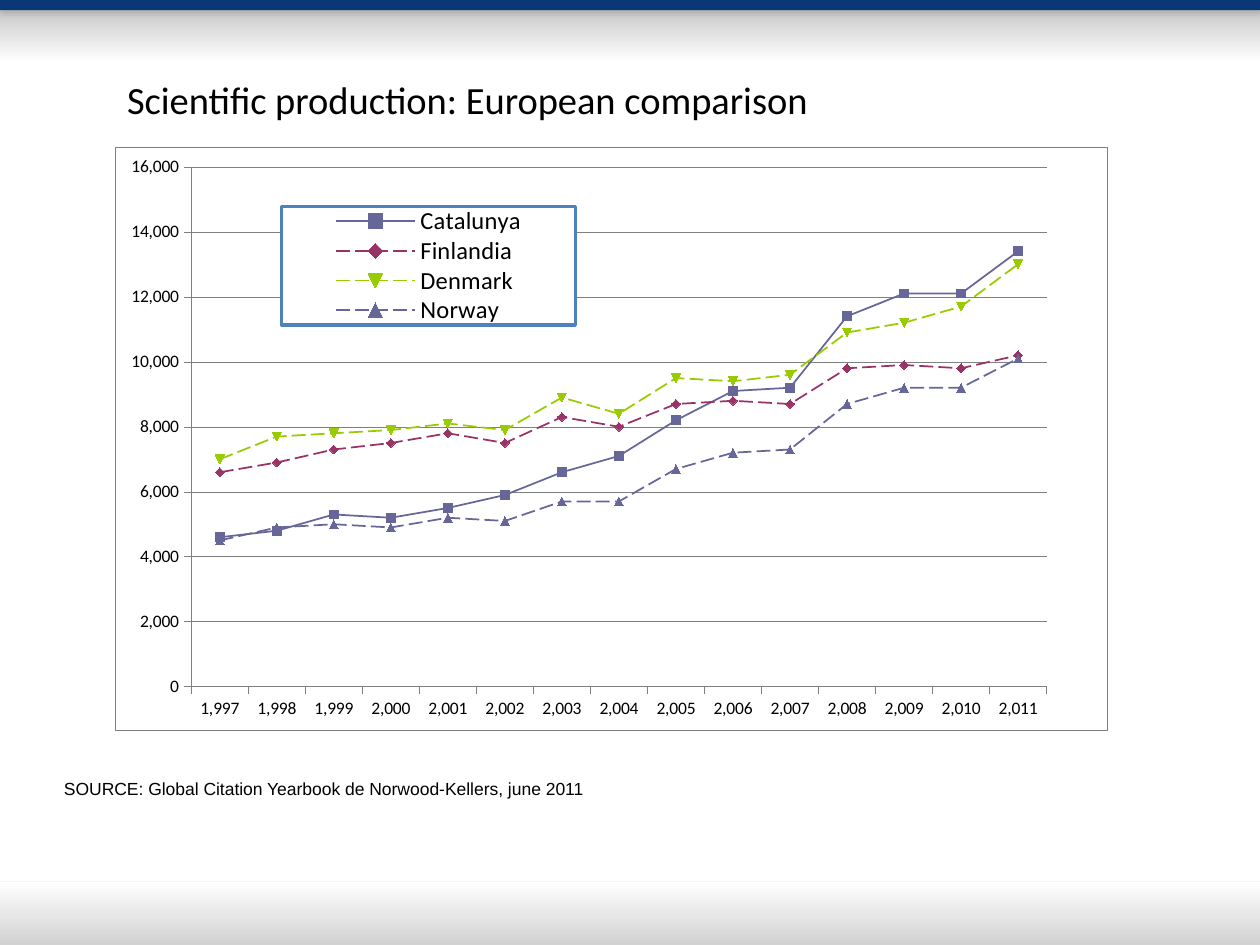
from lxml.etree import fromstring
from pptx import Presentation
from pptx.chart.data import CategoryChartData
from pptx.dml.color import RGBColor
from pptx.enum.chart import XL_CHART_TYPE, XL_LEGEND_POSITION, XL_MARKER_STYLE, XL_TICK_MARK
from pptx.enum.dml import MSO_LINE
from pptx.enum.shapes import MSO_SHAPE
from pptx.enum.text import MSO_ANCHOR
from pptx.oxml.ns import qn
from pptx.util import Inches, Pt

A = 'xmlns:a="http://schemas.openxmlformats.org/drawingml/2006/main"'
C = 'xmlns:c="http://schemas.openxmlformats.org/drawingml/2006/chart"'

TITLE = "Scientific production: European comparison"
SOURCE = "SOURCE: Global Citation Yearbook de Norwood-Kellers, june 2011"
YEARS = [f"{year:,}" for year in range(1997, 2012)]
COUNTRIES = [  # name, colour, dashed, publications per year
    ("Catalunya", "666699", False,
     [4600, 4800, 5300, 5200, 5500, 5900, 6600, 7100, 8200, 9100, 9200, 11400, 12100, 12100, 13400]),
    ("Finlandia", "993366", True,
     [6600, 6900, 7300, 7500, 7800, 7500, 8300, 8000, 8700, 8800, 8700, 9800, 9900, 9800, 10200]),
    ("Denmark", "99CC00", True,
     [7000, 7700, 7800, 7900, 8100, 7900, 8900, 8400, 9500, 9400, 9600, 10900, 11200, 11700, 13000]),
    ("Norway", "666699", True,
     [4500, 4900, 5000, 4900, 5200, 5100, 5700, 5700, 6700, 7200, 7300, 8700, 9200, 9200, 10100]),
]
GREY = "808080"
BAND_HEIGHT = 0.5
# Each band is grey at the slide edge: top, gradient angle, opacity in percent
BANDS = [(7.5 - BAND_HEIGHT, 90, 70), (0, 270, 100)]


def rgb(value):
    return RGBColor.from_string(value)


def set_line(line, color, width, dash=None):
    line.color.rgb = rgb(color)
    line.width = Pt(width)
    if dash:
        line.dash_style = dash


def set_font(font, size, name="Calibri", color="000000"):
    font.size, font.name = Pt(size), name
    font.color.rgb = rgb(color)


def add_rectangle(page, top, height):
    shape = page.shapes.add_shape(MSO_SHAPE.RECTANGLE, 0, Inches(top), Inches(10), Inches(height))
    shape.shadow.inherit = False
    shape.line.fill.background()
    return shape


def add_band(page, top, angle, opacity):
    fill = add_rectangle(page, top, BAND_HEIGHT).fill
    fill.gradient()
    fill.gradient_angle = angle
    for stop, color in zip(fill.gradient_stops, ("BFBFBF", "FFFFFF")):
        stop.color.rgb = rgb(color)
    if opacity < 100:
        for color in fill._xPr.iter(qn("a:srgbClr")):
            color.append(fromstring(f'<a:alpha {A} val="{opacity * 1000}"/>'))


def add_bar(page):
    bar = add_rectangle(page, 0, 0.08)
    bar.fill.solid()
    bar.fill.fore_color.rgb = rgb("0A3776")
    bar._element.spPr.find(qn("a:effectLst")).append(fromstring(
        f'<a:outerShdw {A} blurRad="{Pt(3.1)}" dist="{Pt(1.8)}" dir="5400000" rotWithShape="0">'
        f'<a:srgbClr val="{GREY}"><a:alpha val="35000"/></a:srgbClr></a:outerShdw>'))


def add_text(page, text, *, at, size, font):
    box = page.shapes.add_textbox(*map(Inches, at))
    frame = box.text_frame
    frame.word_wrap = True
    frame.vertical_anchor = MSO_ANCHOR.MIDDLE
    span = frame.paragraphs[0].add_run()
    span.text = text
    set_font(span.font, size, font)


def manual_layout(x, y, width, height, inner=False):
    target = '<c:layoutTarget val="inner"/>' if inner else ""
    return fromstring(
        f'<c:layout {C}><c:manualLayout>{target}<c:xMode val="edge"/><c:yMode val="edge"/>'
        f'<c:x val="{x}"/><c:y val="{y}"/><c:w val="{width}"/><c:h val="{height}"/>'
        '</c:manualLayout></c:layout>')


def box_style(color, width):
    """White fill and a solid outline for a chart part."""
    return fromstring(
        f'<c:spPr {C} {A}><a:solidFill><a:srgbClr val="FFFFFF"/></a:solidFill>'
        f'<a:ln w="{Pt(width)}"><a:solidFill><a:srgbClr val="{color}"/></a:solidFill></a:ln></c:spPr>')


def style_axes(chart):
    for axis in (chart.category_axis, chart.value_axis):
        axis.major_tick_mark = XL_TICK_MARK.OUTSIDE
        axis.minor_tick_mark = XL_TICK_MARK.NONE
        set_line(axis.format.line, GREY, 0.25)
        set_font(axis.tick_labels.font, 10)
    values = chart.value_axis
    values.minimum_scale, values.maximum_scale, values.major_unit = 0, 16000, 2000
    values.tick_labels.number_format = "#,##0"
    values.tick_labels.number_format_is_linked = False
    set_line(values.major_gridlines.format.line, GREY, 0.25)


def style_legend(chart):
    chart.has_legend = True
    legend = chart.legend
    legend.position = XL_LEGEND_POSITION.RIGHT
    legend.include_in_layout = False
    set_font(legend.font, 14)
    element = legend._element
    for old in element.findall(qn("c:layout")):
        element.remove(old)
    element.find(qn("c:legendPos")).addnext(manual_layout(0.168, 0.1, 0.296, 0.203))
    element.find(qn("c:overlay")).addnext(box_style("4F81BD", 2))


def add_line_chart(page):
    data = CategoryChartData(number_format="#,##0")
    data.categories = YEARS
    for name, _, _, values in COUNTRIES:
        data.add_series(name, values)
    place = map(Inches, (0.91, 1.17, 7.88, 4.63))
    chart = page.shapes.add_chart(XL_CHART_TYPE.LINE_MARKERS, *place, data).chart
    chart.has_title = False
    set_font(chart.font, 10)
    chart.plots[0].vary_by_categories = False
    for series, (_, color, dashed, _) in zip(chart.plots[0].series, COUNTRIES):
        series.smooth = False
        set_line(series.format.line, color, 1, MSO_LINE.LONG_DASH if dashed else None)
        marker = series.marker
        marker.style, marker.size = XL_MARKER_STYLE.AUTOMATIC, 5
        marker.format.fill.solid()
        marker.format.fill.fore_color.rgb = rgb(color)
        set_line(marker.format.line, color, 0.25)
    style_axes(chart)
    style_legend(chart)

    space = chart._chartSpace
    space.find(qn("c:chart")).addnext(box_style(GREY, 0.25))
    plot_area = space.find(qn("c:chart")).find(qn("c:plotArea"))
    for old in plot_area.findall(qn("c:layout")):
        plot_area.remove(old)
    plot_area.insert(0, manual_layout(0.077, 0.033, 0.862, 0.892, inner=True))


def main():
    deck = Presentation()
    deck.slide_width, deck.slide_height = Inches(10), Inches(7.5)
    page = deck.slides.add_slide(deck.slide_layouts[6])
    for band in BANDS:
        add_band(page, *band)
    add_bar(page)
    add_text(page, TITLE, at=(0.91, 0.54, 5.85, 0.49), size=22, font="Calibri")
    add_text(page, SOURCE, at=(0.41, 6.12, 9.17, 0.27), size=10, font="Arial")
    add_line_chart(page)
    deck.save("out.pptx")


if __name__ == "__main__":
    main()
